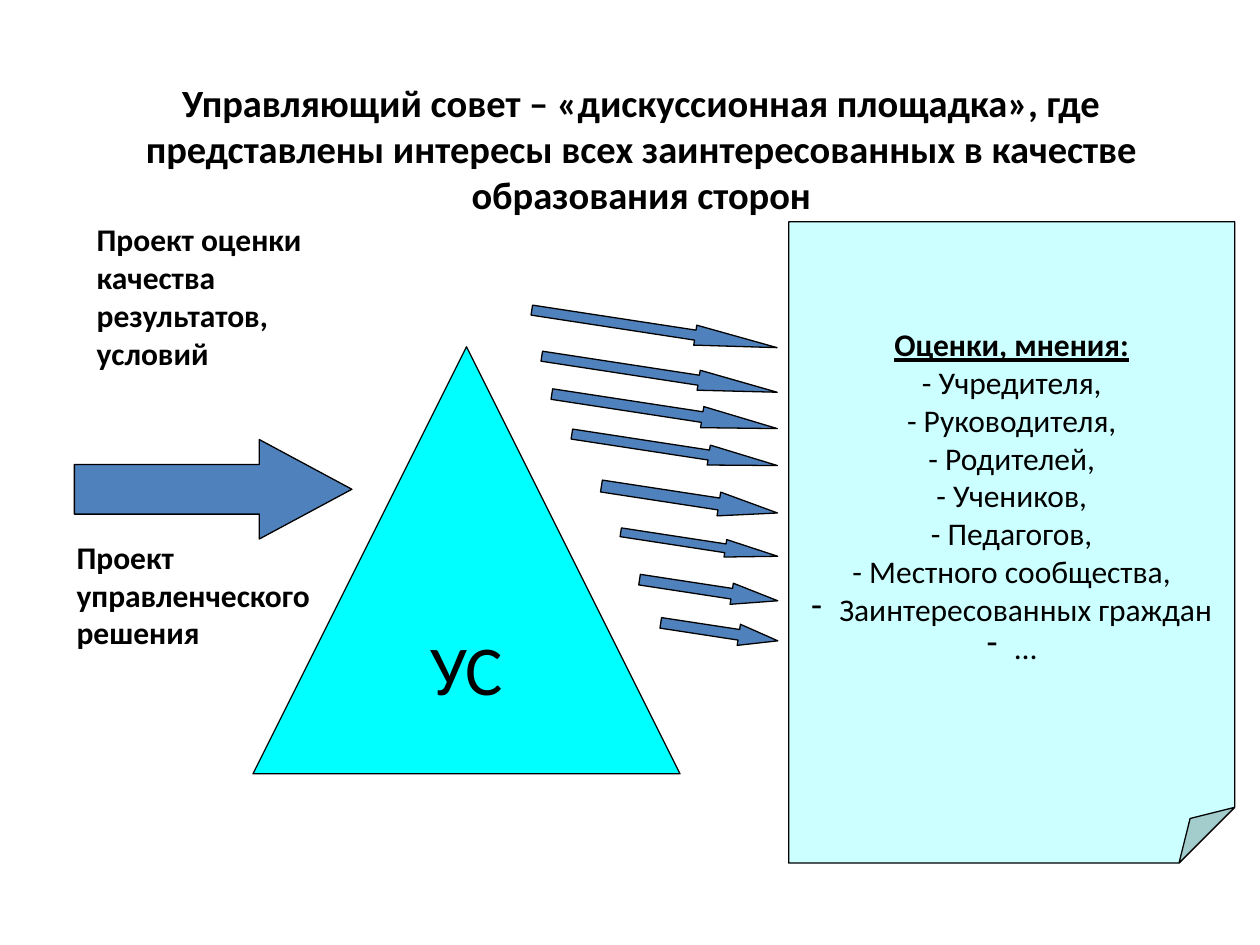
from dataclasses import dataclass
from pptx import Presentation
from pptx import util as u
from pptx.dml import color
from pptx.enum import shapes, text
from pptx.oxml import ns
from lxml import etree

Pt = u.Pt
Kind = shapes.MSO_SHAPE
Align = text.PP_ALIGN
BLACK, BLUE, CYAN, PALE = "000000", "4F81BD", "00FFFF", "CCFFFF"
EDGE, TILT = 444.9, 8.7


@dataclass
class Box:
    left: float
    top: float
    width: float
    height: float


@dataclass
class Line:
    words: str
    size: float = 18
    bold: bool = False
    under: bool = False
    dash: bool = False


def paint(form, code: str) -> None:
    if hasattr(form, "solid"):
        form.solid()
        form = form.fore_color
    form.rgb = color.RGBColor.from_string(code)


def write(shape, lines: list[Line], align, anchor, wrap: bool = True) -> None:
    frame = shape.text_frame
    frame.word_wrap = wrap
    frame.vertical_anchor = anchor
    for num, line in enumerate(lines):
        para = frame.add_paragraph() if num else frame.paragraphs[0]
        para.alignment = align
        if line.dash:
            props = para._p.get_or_add_pPr()
            props.set("marL", str(Pt(16)))
            props.set("indent", str(-Pt(16)))
            etree.SubElement(props, ns.qn("a:buChar")).set("char", "-")
        run = para.add_run()
        run.text = line.words
        font = run.font
        font.name, font.size = "Calibri", Pt(line.size)
        font.bold, font.underline = line.bold, line.under
        paint(font.color, BLACK)


def label(slide, box: Box, line: Line, align=Align.LEFT, anchor=text.MSO_ANCHOR.TOP) -> None:
    area = slide.shapes.add_textbox(Pt(box.left), Pt(box.top), Pt(box.width), Pt(box.height))
    write(area, [line], align, anchor)


def draw(slide, kind, box: Box, fill: str):
    shape = slide.shapes.add_shape(kind, Pt(box.left), Pt(box.top), Pt(box.width), Pt(box.height))
    shape.shadow.inherit = False
    paint(shape.fill, fill)
    paint(shape.line.fill, BLACK)
    shape.line.width = Pt(0.75)
    return shape


def adjust(shape, **guides: float) -> None:
    edits = shape._element.spPr.find(ns.qn("a:prstGeom")).find(ns.qn("a:avLst"))
    for guide in list(edits):
        edits.remove(guide)
    for name, share in guides.items():
        guide = etree.SubElement(edits, ns.qn("a:gd"))
        guide.set("name", name)
        guide.set("fmla", f"val {round(share * 100000)}")


def arrow(slide, box: Box, tilt: float = 0) -> None:
    shape = draw(slide, Kind.RIGHT_ARROW, box, BLUE)
    adjust(shape, adj1=0.5, adj2=box.width / 3 / box.height)
    shape.rotation = tilt


def main() -> None:
    """Build the slide on the governing council and save it."""
    deck = Presentation()
    deck.slide_width, deck.slide_height = Pt(720), Pt(540)
    slide = deck.slides.add_slide(deck.slide_layouts[6])
    middle = text.MSO_ANCHOR.MIDDLE

    title = "Управляющий совет – «дискуссионная площадка», где представлены интересы всех заинтересованных в качестве образования сторон"
    label(slide, Box(42.5, 39.5, 648, 90), Line(title, 22, True), Align.CENTER, middle)

    board = draw(slide, Kind.ISOSCELES_TRIANGLE, Box(144.6, 198.2, 244, 244), CYAN)
    write(board, [Line("УС", 40)], Align.CENTER, middle, False)

    arrow(slide, Box(42.5, 251.2, 158.6, 56.8))
    rays = [(182.2, 141.8, 11.5), (208.1, 136.1, 11.5), (229, 130.3, 12.2), (251.3, 118.8, 11.5),
            (278.6, 101.8, 13.7), (306, 90.7, 10.1), (331.2, 79.9, 12.2), (355, 67.7, 12.2)]
    for top, width, height in rays:
        arrow(slide, Box(EDGE - width, top, width, height), TILT)

    note = draw(slide, Kind.FOLDED_CORNER, Box(450.7, 126.7, 254.9, 366.5), PALE)
    adjust(note, adj=0.125)
    note.text_frame.margin_bottom = Pt(25.6)
    voices = ["Учредителя", "Руководителя", "Родителей", "Учеников", "Педагогов", "Местного сообщества"]
    lines = [Line("Оценки, мнения:", bold=True, under=True)]
    lines += [Line(f"- {voice},") for voice in voices]
    lines += [Line(words, dash=True) for words in ("Заинтересованных граждан", "…")]
    write(note, lines, Align.CENTER, middle, False)

    label(slide, Box(48.2, 122.4, 158.4, 94.3), Line("Проект оценки качества результатов, условий", bold=True))
    label(slide, Box(36.7, 303.8, 158.4, 72.7), Line("Проект управленческого решения", bold=True))
    deck.save("out.pptx")


if __name__ == "__main__":
    main()
